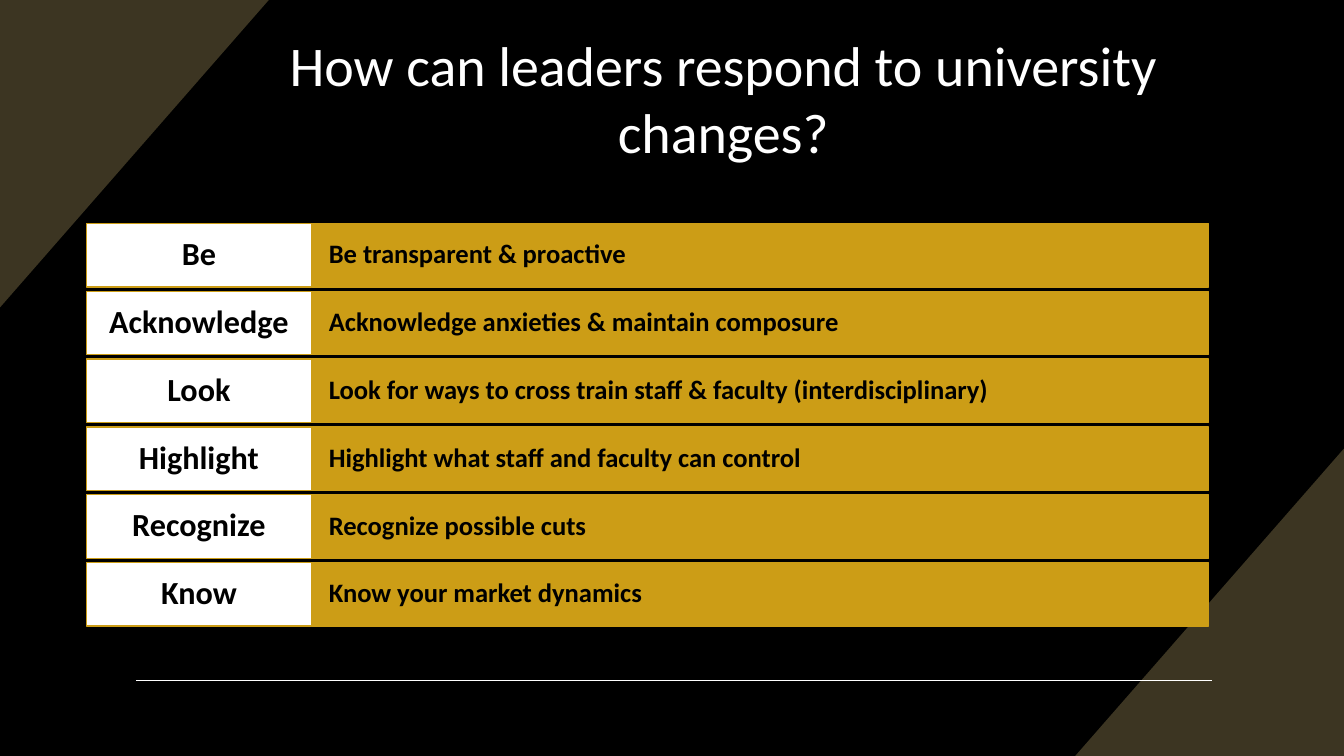
from pptx import Presentation
from pptx import util as u
from pptx.dml.color import RGBColor
from pptx.enum import shapes, text
from pptx.oxml.ns import qn
from lxml import etree

Pt = u.Pt
BLACK, WHITE, GOLD, OLIVE = "000000", "FFFFFF", "CC9D16", "3C3522"
WIDTH, HEIGHT = 960, 540
CORNER_W, CORNER_H = 192, 219.6
ROW_TOP, ROW_PITCH, ROW_H = 159.6, 48.45, 45.4
LABEL_X, LABEL_W, DETAIL_W = 61.9, 160.5, 640.8
ROWS = [
    ("Be", "Be transparent & proactive"),
    ("Acknowledge", "Acknowledge anxieties & maintain composure"),
    ("Look", "Look for ways to cross train staff & faculty (interdisciplinary)"),
    ("Highlight", "Highlight what staff and faculty can control"),
    ("Recognize", "Recognize possible cuts"),
    ("Know", "Know your market dynamics"),
]


def color(value):
    """Return the colour for a hex string."""
    return RGBColor.from_string(value)


def paint(fill, value):
    """Make a fill solid in one colour."""
    fill.solid()
    fill.fore_color.rgb = color(value)


def write(tf, content, size, value, align, bold=False):
    """Write one vertically centred paragraph."""
    tf.word_wrap = True
    tf.vertical_anchor = text.MSO_ANCHOR.MIDDLE
    p = tf.paragraphs[0]
    p.alignment = align
    r = p.add_run()
    r.text = content
    r.font.name, r.font.size, r.font.bold = "Calibri", Pt(size), bold
    r.font.color.rgb = color(value)
    return p


def add_corner(s, points):
    """Draw a filled triangle through the given points."""
    start, *rest = [(Pt(x), Pt(y)) for x, y in points]
    builder = s.shapes.build_freeform(*start, scale=1.0)
    builder.add_line_segments(rest, close=True)
    sp = builder.convert_to_shape()
    sp.shadow.inherit = False
    paint(sp.fill, OLIVE)
    sp.line.fill.background()


def add_rule(s, x1, x2, y):
    """Draw a thin white horizontal line."""
    line = s.shapes.add_connector(shapes.MSO_CONNECTOR.STRAIGHT, Pt(x1), Pt(y), Pt(x2), Pt(y))
    line.line.width = Pt(1)
    line.line.color.rgb = color(WHITE)
    etree.SubElement(line._element.spPr, qn("a:effectLst"))


def add_title(s, content):
    """Add the slide heading."""
    box = s.shapes.add_textbox(Pt(163.4), Pt(15.8), Pt(706.3), Pt(107.3))
    write(box.text_frame, content, 40, WHITE, text.PP_ALIGN.CENTER)


def add_cell(s, x, y, w, fill, content, size, align, inset_x, inset_y):
    """Add a gold-edged box with bold text."""
    sp = s.shapes.add_shape(shapes.MSO_SHAPE.RECTANGLE, Pt(x), Pt(y), Pt(w), Pt(ROW_H))
    sp.shadow.inherit = False
    paint(sp.fill, fill)
    sp.line.color.rgb = color(GOLD)
    sp.line.width = Pt(1)
    tf = sp.text_frame
    tf.margin_left = tf.margin_right = Pt(inset_x)
    tf.margin_top = tf.margin_bottom = Pt(inset_y)
    write(tf, content, size, BLACK, align, bold=True).line_spacing = 0.9


def add_row(s, y, label, detail):
    """Add a detail bar with its label on the left."""
    add_cell(s, LABEL_X + LABEL_W, y, DETAIL_W, GOLD, detail, 19, text.PP_ALIGN.LEFT, 12.5, 11.5)
    add_cell(s, LABEL_X, y, LABEL_W, WHITE, label, 23, text.PP_ALIGN.CENTER, 8.5, 4.5)


def main():
    """Build and save the slide."""
    prs = Presentation()
    prs.slide_width, prs.slide_height = Pt(WIDTH), Pt(HEIGHT)
    s = prs.slides.add_slide(prs.slide_layouts[6])
    paint(s.background.fill, BLACK)
    add_corner(s, [(WIDTH, HEIGHT - CORNER_H), (WIDTH, HEIGHT), (WIDTH - CORNER_W, HEIGHT)])
    add_corner(s, [(0, CORNER_H), (0, 0), (CORNER_W, 0)])
    add_rule(s, 97.2, 865.4, 486)
    add_title(s, "How can leaders respond to university changes?")
    for i, (label, detail) in enumerate(ROWS):
        add_row(s, ROW_TOP + i * ROW_PITCH, label, detail)
    prs.save("out.pptx")


if __name__ == "__main__":
    main()
